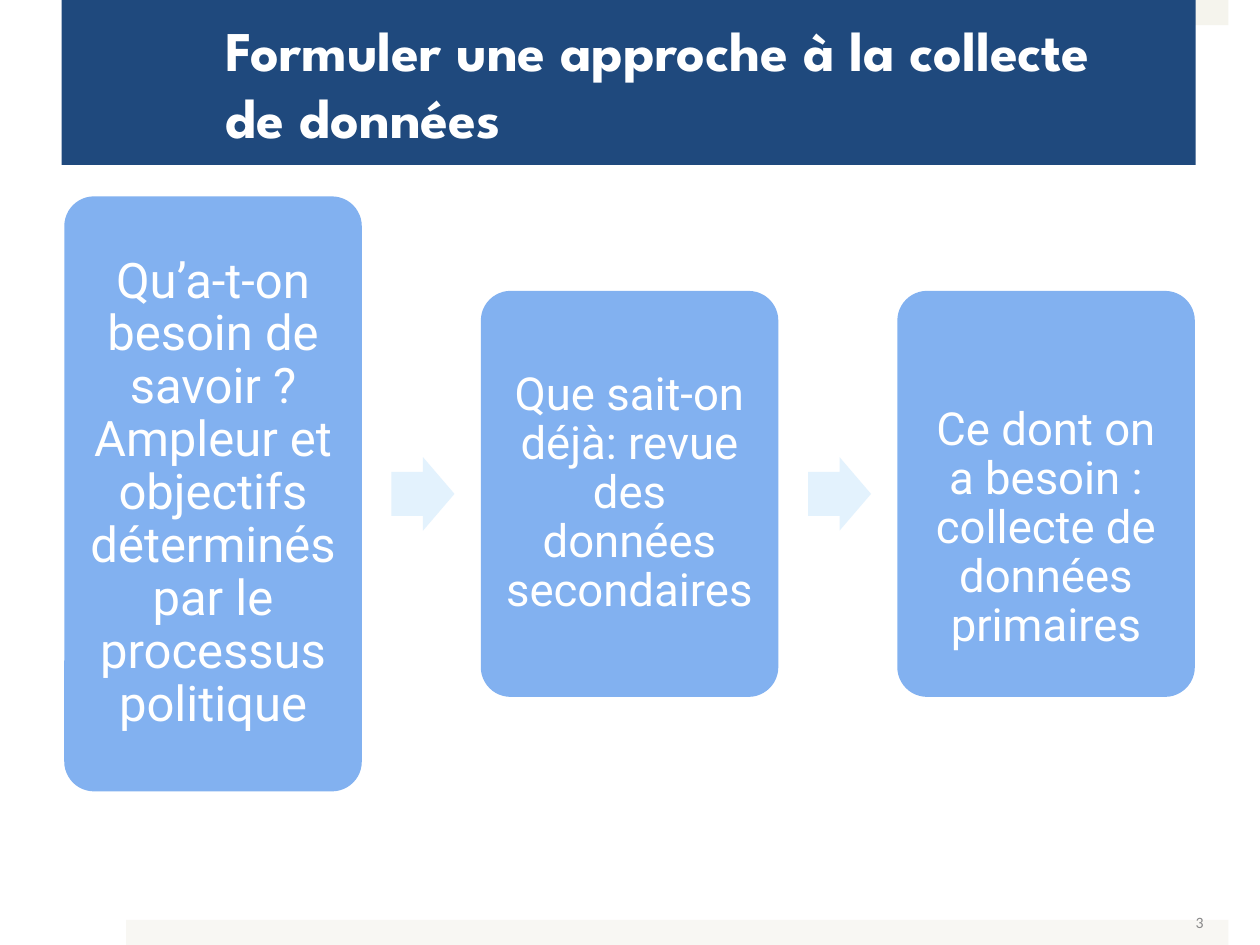
from pptx import Presentation
from pptx.dml.color import RGBColor
from pptx.enum import shapes, text
from pptx.util import Pt

# Content
TITLE = "Formuler une approche à la collecte de données"
PAGE = "3"
STEPS = [  # wording, font size, card height, extra space above the text
    ("Qu’a-t-on besoin de savoir ? Ampleur et objectifs déterminés "
     "par le processus politique", 28, 340, 0),
    ("Que sait-on déjà: revue des données secondaires", 26, 232, 0),
    ("Ce dont on a besoin : collecte de données primaires", 26, 232, 40),
]

# Layout
CARD_LEFT, CARD_WIDTH, CARD_GAP, MIDDLE = 36.75, 170, 68, 282.25
ARROW_WIDTH, ARROW_HEIGHT, ARROW_OFFSET = 36, 42, 17
CARD_INSET = 8.5

NAVY, BLUE, PALE, WHITE, GREY = "1F497D", "82B1F0", "E3F2FD", "FFFFFF", "898989"


def color(hex_code):
    return RGBColor.from_string(hex_code)


def block(slide, kind, left, top, width, height, fill, adjust=()):
    part = slide.shapes.add_shape(kind, Pt(left), Pt(top), Pt(width), Pt(height))
    part.shadow.inherit = False
    part.fill.solid()
    part.fill.fore_color.rgb = color(fill)
    part.line.fill.background()
    for i, value in enumerate(adjust):
        part.adjustments[i] = value
    return part


def write(part, wording, size, font, ink, insets, align, bold=False, spacing=1.0):
    frame = part.text_frame
    frame.word_wrap = True
    frame.vertical_anchor = text.MSO_ANCHOR.MIDDLE
    (frame.margin_left, frame.margin_top,
     frame.margin_right, frame.margin_bottom) = map(Pt, insets)
    paragraph = frame.paragraphs[0]
    paragraph.alignment = align
    paragraph.line_spacing = spacing
    run = paragraph.add_run()
    run.text = wording
    run.font.size = Pt(size)
    run.font.name = font
    run.font.bold = bold
    run.font.color.rgb = color(ink)


def main():
    deck = Presentation()
    deck.slide_width, deck.slide_height = Pt(720), Pt(540)
    slide = deck.slides.add_slide(deck.slide_layouts[6])
    kinds, align = shapes.MSO_SHAPE, text.PP_ALIGN

    # Edge bands and page number
    block(slide, kinds.RECTANGLE, 72, 0, 630, 14.4, "F5F4ED")
    block(slide, kinds.RECTANGLE, 72, 525.6, 630, 14.4, "F8F7F3")
    page = slide.shapes.add_textbox(Pt(525), Pt(512.75), Pt(167.75), Pt(28.75))
    write(page, PAGE, 9, "Calibri", GREY, (5, 3, 5, 3), align.RIGHT)

    # Title banner
    banner = block(slide, kinds.RECTANGLE, 35.25, 0, 648, 94.25, NAVY)
    write(banner, TITLE, 32, "League Spartan", WHITE, (93.6, 3.6, 21.6, 3.6),
          align.LEFT, bold=True)

    # Step cards, with an arrow in each gap
    for i, (wording, size, height, extra) in enumerate(STEPS):
        left = CARD_LEFT + i * (CARD_WIDTH + CARD_GAP)
        if i:
            block(slide, kinds.RIGHT_ARROW, left - CARD_GAP + ARROW_OFFSET,
                  MIDDLE - ARROW_HEIGHT / 2, ARROW_WIDTH, ARROW_HEIGHT,
                  PALE, (0.6, 0.5))
        card = block(slide, kinds.ROUNDED_RECTANGLE, left, MIDDLE - height / 2,
                     CARD_WIDTH, height, BLUE, (0.1,))
        write(card, wording, size, "Roboto", WHITE,
              (CARD_INSET, CARD_INSET + extra, CARD_INSET, CARD_INSET),
              align.CENTER, spacing=0.9)

    deck.save("out.pptx")


if __name__ == "__main__":
    main()
